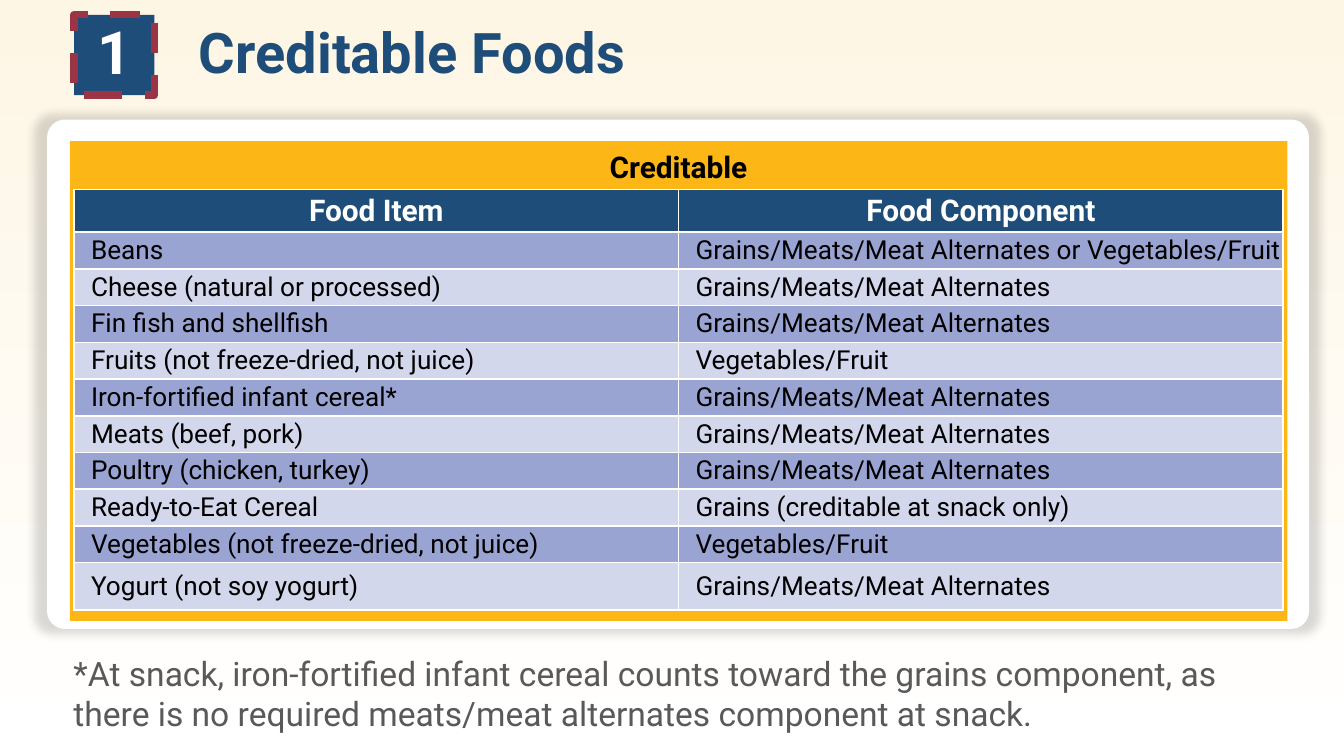
from lxml import etree
from pptx import Presentation
from pptx.dml.color import RGBColor
from pptx.enum.dml import MSO_LINE
from pptx.enum.shapes import MSO_SHAPE
from pptx.enum.text import MSO_ANCHOR, PP_ALIGN
from pptx.oxml import parse_xml
from pptx.oxml.ns import nsdecls, qn
from pptx.util import Cm, Pt

RECTANGLE, ROUNDED = MSO_SHAPE.RECTANGLE, MSO_SHAPE.ROUNDED_RECTANGLE
TOP, MIDDLE = MSO_ANCHOR.TOP, MSO_ANCHOR.MIDDLE
LEFT, CENTER = PP_ALIGN.LEFT, PP_ALIGN.CENTER
DASH = MSO_LINE.DASH

FONT = "Roboto"
NAVY, GOLD, RED = "1D4D78", "FCB615", "9B3546"
CREAM, WHITE, BLACK, GREY = "FEF6E5", "FFFFFF", "000000", "595959"
BANDS = ("9AA4D2", "D3D7EC")

MEAT = "Grains/Meats/Meat Alternates"
PRODUCE = "Vegetables/Fruit"
HEADINGS = ("Food Item", "Food Component")
FOODS = [
    ("Beans", "Grains/Meats/Meat Alternates or Vegetables/Fruit"),
    ("Cheese (natural or processed)", MEAT),
    ("Fin fish and shellfish", MEAT),
    ("Fruits (not freeze-dried, not juice)", PRODUCE),
    ("Iron-fortified infant cereal*", MEAT),
    ("Meats (beef, pork)", MEAT),
    ("Poultry (chicken, turkey)", MEAT),
    ("Ready-to-Eat Cereal", "Grains (creditable at snack only)"),
    ("Vegetables (not freeze-dried, not juice)", PRODUCE),
    ("Yogurt (not soy yogurt)", MEAT),
]
FOOTNOTE = ("*At snack, iron-fortified infant cereal counts toward the grains "
            "component, as there is no required meats/meat alternates "
            "component at snack.")


def color(value):
    return RGBColor.from_string(value)


def write(frame, text, size, ink, bold=False, align=LEFT, spacing=None):
    para = frame.paragraphs[0]
    para.alignment = align
    if spacing:
        para.line_spacing = spacing
    span = para.add_run()
    span.text = text
    span.font.name = FONT
    span.font.size = Pt(size)
    span.font.bold = bold
    span.font.color.rgb = color(ink)


def add_panel(page, kind, box, fill):
    panel = page.shapes.add_shape(kind, *map(Cm, box))
    panel.shadow.inherit = False
    panel.fill.solid()
    panel.fill.fore_color.rgb = color(fill)
    panel.line.fill.background()
    return panel


def add_text(page, box, anchor, *content, **style):
    frame = page.shapes.add_textbox(*map(Cm, box)).text_frame
    frame.word_wrap = True
    frame.vertical_anchor = anchor
    write(frame, *content, **style)


def add_background(page):
    fill = page.background.fill
    fill.gradient()
    fill.gradient_angle = 270
    for stop, value in zip(fill.gradient_stops, (CREAM, WHITE)):
        stop.color.rgb = color(value)
    fill.gradient_stops[0].position = 0
    fill.gradient_stops[1].position = 1


def add_card(page, box):
    card = add_panel(page, ROUNDED, box, WHITE)
    card.adjustments[0] = 0.035
    # Soft shadow, slightly larger than the card
    effects = card._element.spPr.find(qn("a:effectLst"))
    effects.append(parse_xml(
        f'<a:outerShdw {nsdecls("a")} blurRad="{Pt(5)}" sx="102000" sy="102000" '
        f'algn="ctr" rotWithShape="0"><a:srgbClr val="{BLACK}">'
        '<a:alpha val="15000"/></a:srgbClr></a:outerShdw>'))


def add_heading(page, box):
    left, top, width, height = box
    # Numbered badge
    badge = add_panel(page, RECTANGLE, (left, top, height, height), NAVY)
    badge.line.color.rgb = color(RED)
    badge.line.width = Pt(4)
    badge.line.dash_style = DASH
    badge.text_frame.vertical_anchor = MIDDLE
    write(badge.text_frame, "1", 32, WHITE, bold=True, align=CENTER, spacing=0.9)
    # Title
    indent = 2.11
    add_text(page, (left + indent, top + 0.1, width - indent, height - 0.2), MIDDLE,
             "Creditable Foods", 30, NAVY, bold=True, spacing=0.9)


def add_border(cell, side):
    line = etree.Element(qn(f"a:{side}"), w=str(Pt(1)))
    fill = etree.SubElement(line, qn("a:solidFill"))
    etree.SubElement(fill, qn("a:srgbClr"), val=WHITE)
    cell._tc.get_or_add_tcPr().insert(0, line)


def fill_cell(cell, fill, indent, *content, **style):
    cell.fill.solid()
    cell.fill.fore_color.rgb = color(fill)
    cell.vertical_anchor = MIDDLE
    cell.margin_left, cell.margin_right = Cm(indent), 0
    cell.margin_top = cell.margin_bottom = Cm(0.05)
    write(cell.text_frame, *content, **style)


def add_food_table(page, box):
    left, top, width, height = box
    # Gold frame with the table caption
    frame = add_panel(page, RECTANGLE, box, GOLD).text_frame
    frame.vertical_anchor = TOP
    frame.margin_top, frame.margin_bottom = Cm(0.15), Cm(0.08)
    write(frame, "Creditable", 16, BLACK, bold=True, align=CENTER)
    # Table inside the frame
    edge, caption = 0.08, 0.91
    heights = [0.81] + [0.69] * (len(FOODS) - 1) + [0.89]
    table = page.shapes.add_table(
        len(heights), 2, Cm(left + edge), Cm(top + caption),
        Cm(width - 2 * edge), Cm(sum(heights))).table
    for row, row_height in zip(table.rows, heights):
        row.height = Cm(row_height)
    for index, heading in enumerate(HEADINGS):
        fill_cell(table.cell(0, index), NAVY, 0, heading, 16, WHITE,
                  bold=True, align=CENTER)
    for number, food in enumerate(FOODS):
        for index, text in enumerate(food):
            fill_cell(table.cell(number + 1, index), BANDS[number % 2], 0.32,
                      text, 14, BLACK)
    # White rule between the columns
    for number in range(len(heights)):
        add_border(table.cell(number, 0), "lnR")
        add_border(table.cell(number, 1), "lnL")


def main():
    deck = Presentation()
    deck.slide_width, deck.slide_height = Cm(25.4), Cm(14.29)
    page = deck.slides.add_slide(deck.slide_layouts[6])
    add_background(page)
    add_card(page, (0.89, 2.26, 23.85, 9.63))
    add_heading(page, (1.4, 0.28, 22.86, 1.52))
    add_food_table(page, (1.32, 2.67, 23.01, 9.07))
    # Footnote
    add_text(page, (1.14, 12.22, 23.11, 1.8), TOP, FOOTNOTE, 18, GREY)
    deck.save("out.pptx")


if __name__ == "__main__":
    main()
